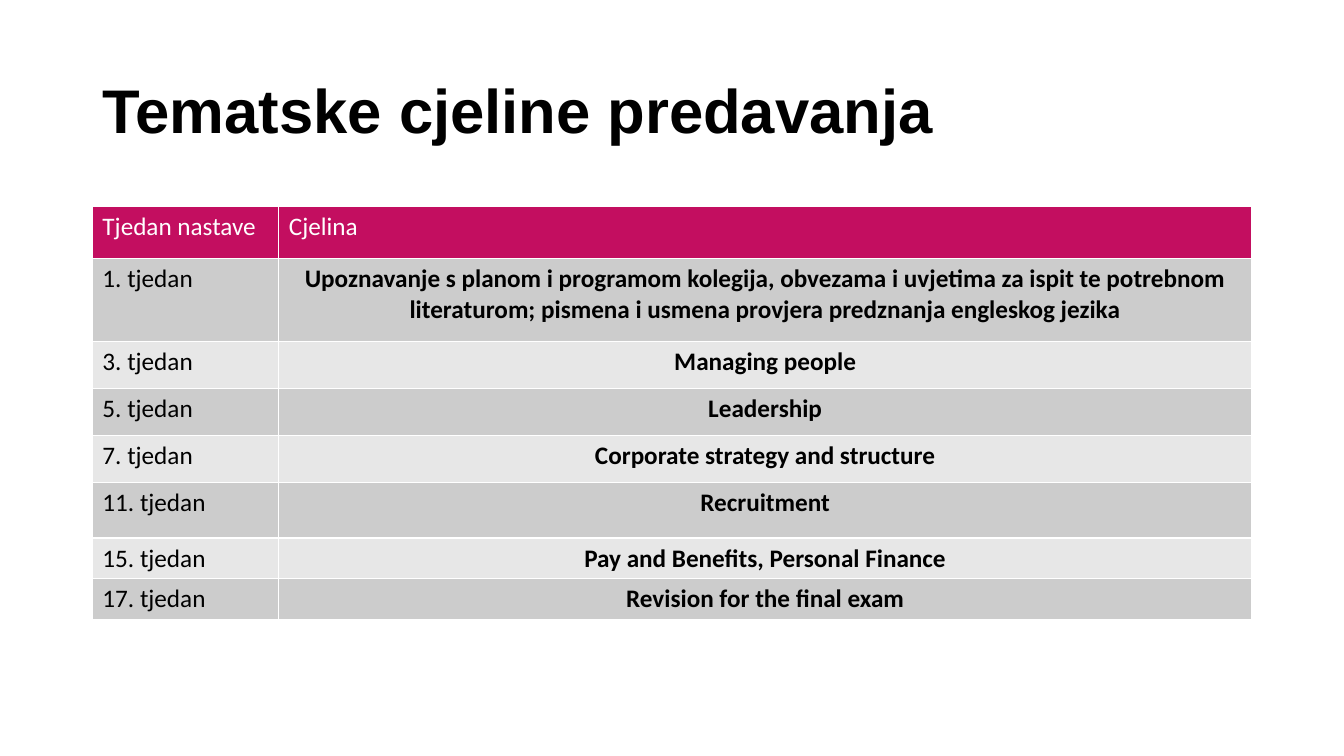
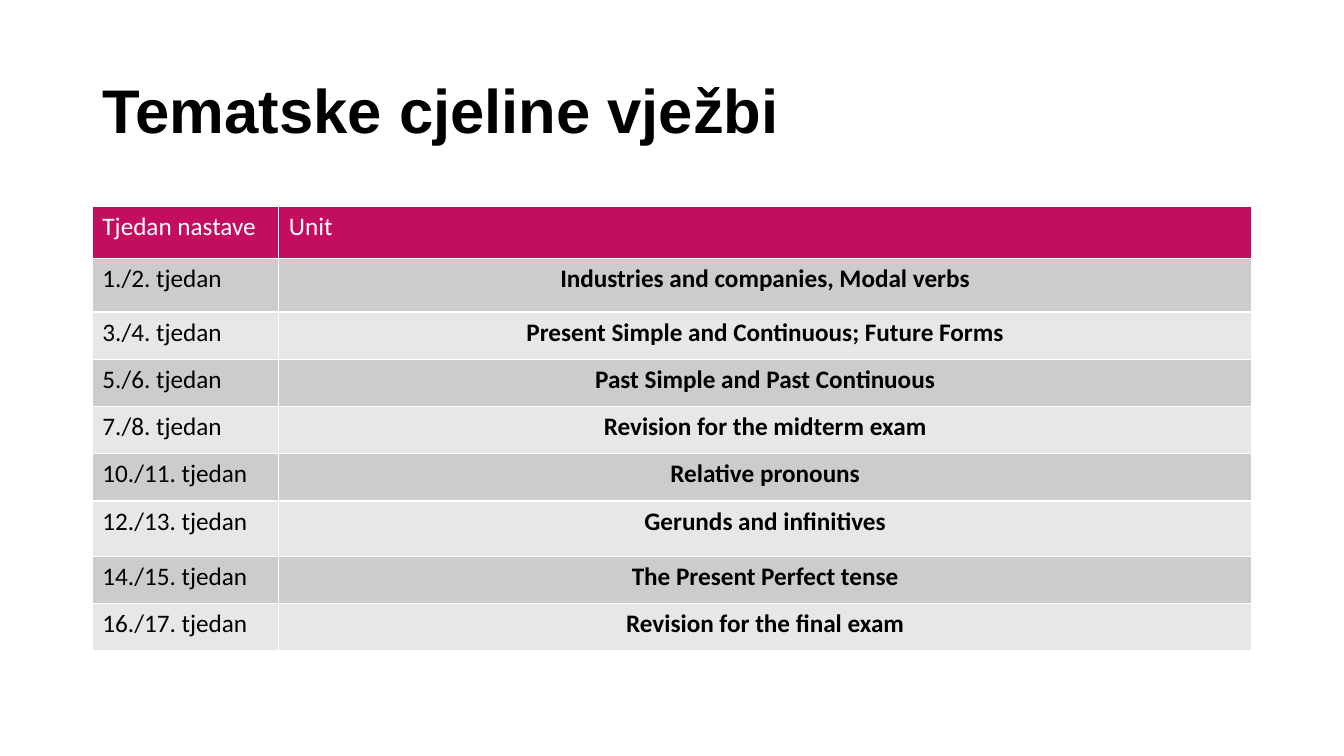
from dataclasses import dataclass

from lxml import etree
from pptx import Presentation
from pptx.dml.color import RGBColor
from pptx.enum.text import MSO_ANCHOR, PP_ALIGN
from pptx.oxml.ns import qn
from pptx.presentation import Presentation as Deck
from pptx.slide import Slide
from pptx.table import _Cell
from pptx.util import Pt

LEFT, CENTER = PP_ALIGN.LEFT, PP_ALIGN.CENTER
MIDDLE = MSO_ANCHOR.MIDDLE

BLACK = RGBColor(0x00, 0x00, 0x00)
WHITE = RGBColor(0xFF, 0xFF, 0xFF)
MAGENTA = RGBColor(0xC3, 0x0E, 0x60)
BANDS = (RGBColor(0xCC, 0xCC, 0xCC), RGBColor(0xE7, 0xE7, 0xE7))

TITLE_FONT, TABLE_FONT = "Arial", "Calibri"
TITLE_ONLY = 5
MARGIN, CONTENT_WIDTH = 66, 828
TITLE_TOP, TITLE_HEIGHT = 28.75, 104.4
TABLE_TOP = 147.75
WEEK_WIDTH = 133.2
HEADER_HEIGHT, ROW_HEIGHT, TALL_ROW, SHORT_ROW = 36.8, 33.75, 39.4, 29.2
BORDER_WIDTH = 1


@dataclass(frozen=True)
class Week:
    label: str
    topic: str
    height: float = ROW_HEIGHT


@dataclass(frozen=True)
class Schedule:
    title: str
    topic_heading: str
    weeks: tuple[Week, ...]


SCHEDULES = (
    Schedule("Tematske cjeline predavanja", "Cjelina", (
        Week("1. tjedan",
             "Upoznavanje s planom i programom kolegija, obvezama i uvjetima "
             "za ispit te potrebnom literaturom; pismena i usmena provjera "
             "predznanja engleskog jezika", 59.2),
        Week("3. tjedan", "Managing people"),
        Week("5. tjedan", "Leadership"),
        Week("7. tjedan", "Corporate strategy and structure"),
        Week("11. tjedan", "Recruitment", TALL_ROW),
        Week("15. tjedan", "Pay and Benefits, Personal Finance", SHORT_ROW),
        Week("17. tjedan", "Revision for the final exam", SHORT_ROW),
    )),
    Schedule("Tematske cjeline vježbi", "Unit", (
        Week("1./2. tjedan", "Industries and companies, Modal verbs", 38.4),
        Week("3./4. tjedan", "Present Simple and Continuous; Future Forms"),
        Week("5./6. tjedan", "Past Simple and Past Continuous"),
        Week("7./8. tjedan", "Revision for the midterm exam"),
        Week("10./11. tjedan", "Relative pronouns"),
        Week("12./13. tjedan", "Gerunds and infinitives", TALL_ROW),
        Week("14./15. tjedan", "The Present Perfect tense"),
        Week("16./17. tjedan", "Revision for the final exam"),
    )),
)


def add_title(slide: Slide, text: str) -> None:
    title = slide.shapes.title
    title.left, title.top = Pt(MARGIN), Pt(TITLE_TOP)
    title.width, title.height = Pt(CONTENT_WIDTH), Pt(TITLE_HEIGHT)
    title.text_frame.vertical_anchor = MIDDLE
    paragraph = title.text_frame.paragraphs[0]
    paragraph.alignment = LEFT
    paragraph.line_spacing = 0.9
    run = paragraph.add_run()
    run.text = text
    run.font.name, run.font.size, run.font.bold = TITLE_FONT, Pt(44), True
    run.font.color.rgb = BLACK


def add_borders(cell: _Cell) -> None:
    """Put white lines on all four sides; they must precede the fill in the XML."""
    properties = cell._tc.get_or_add_tcPr()
    for position, side in enumerate(("a:lnL", "a:lnR", "a:lnT", "a:lnB")):
        line = etree.Element(qn(side), w=str(Pt(BORDER_WIDTH)))
        solid = etree.SubElement(line, qn("a:solidFill"))
        etree.SubElement(solid, qn("a:srgbClr"), val=str(WHITE))
        properties.insert(position, line)


def fill_cell(cell: _Cell, text: str, fill: RGBColor, color: RGBColor = BLACK,
              bold: bool = False, alignment: PP_ALIGN = LEFT) -> None:
    cell.fill.solid()
    cell.fill.fore_color.rgb = fill
    add_borders(cell)
    paragraph = cell.text_frame.paragraphs[0]
    paragraph.alignment = alignment
    run = paragraph.add_run()
    run.text = text
    run.font.name, run.font.size, run.font.bold = TABLE_FONT, Pt(18), bold
    run.font.color.rgb = color


def add_schedule_table(slide: Slide, schedule: Schedule) -> None:
    heights = [HEADER_HEIGHT, *(week.height for week in schedule.weeks)]
    table = slide.shapes.add_table(
        len(heights), 2, Pt(MARGIN), Pt(TABLE_TOP),
        Pt(CONTENT_WIDTH), Pt(sum(heights))).table
    table.columns[0].width = Pt(WEEK_WIDTH)
    table.columns[1].width = Pt(CONTENT_WIDTH - WEEK_WIDTH)
    for row, height in zip(table.rows, heights):
        row.height = Pt(height)

    for column, heading in enumerate(("Tjedan nastave", schedule.topic_heading)):
        fill_cell(table.cell(0, column), heading, MAGENTA, WHITE)
    for index, week in enumerate(schedule.weeks):
        band = BANDS[index % len(BANDS)]
        fill_cell(table.cell(index + 1, 0), week.label, band)
        fill_cell(table.cell(index + 1, 1), week.topic, band,
                  bold=True, alignment=CENTER)


def add_schedule_slide(deck: Deck, schedule: Schedule) -> None:
    slide = deck.slides.add_slide(deck.slide_layouts[TITLE_ONLY])
    add_title(slide, schedule.title)
    add_schedule_table(slide, schedule)


def main() -> None:
    deck = Presentation()
    deck.slide_width, deck.slide_height = Pt(960), Pt(540)
    for schedule in SCHEDULES:
        add_schedule_slide(deck, schedule)
    deck.save("out.pptx")


if __name__ == "__main__":
    main()
